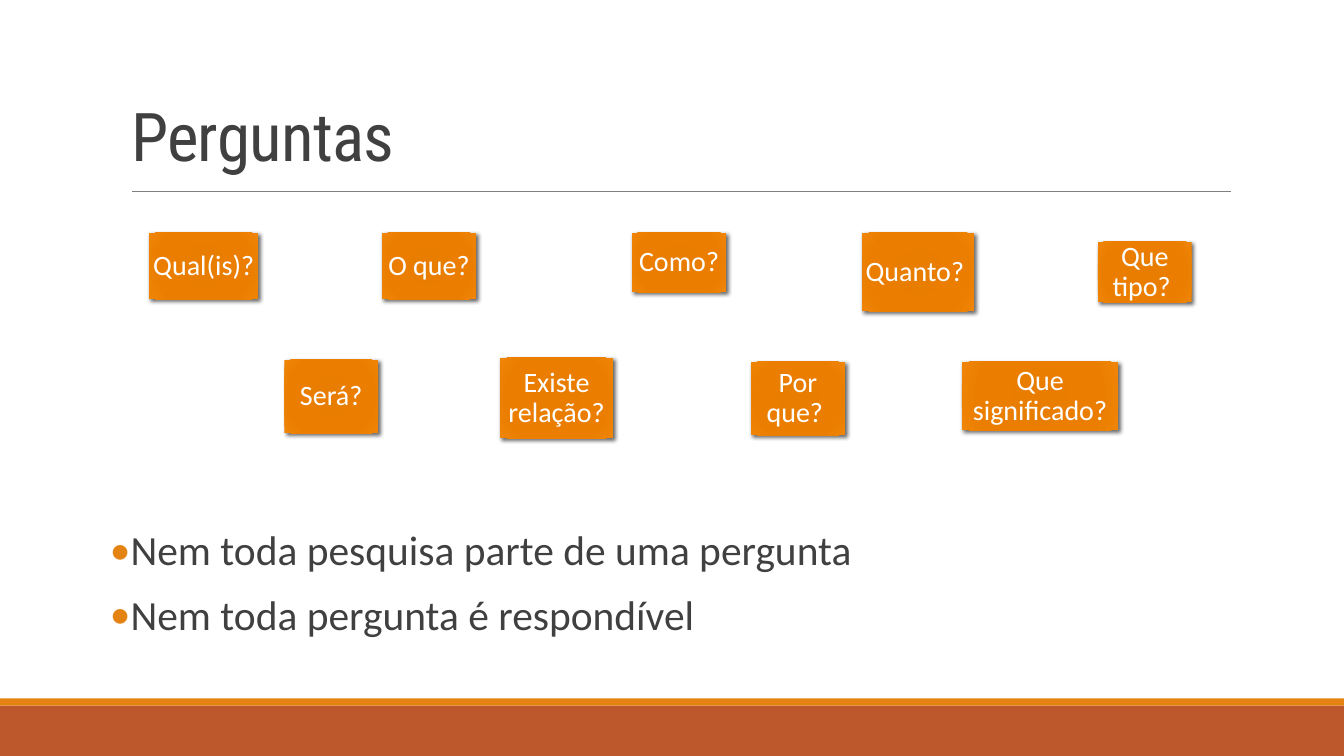
from lxml import etree
from pptx import Presentation
from pptx.dml.color import RGBColor
from pptx.enum.shapes import MSO_CONNECTOR as Link, MSO_SHAPE as Shape
from pptx.enum.text import MSO_ANCHOR as Anchor, MSO_AUTO_SIZE as Fit, PP_ALIGN as Align
from pptx.oxml import parse_xml
from pptx.oxml.ns import nsdecls, qn
from pptx.util import Inches, Pt

RUST = RGBColor(0xBD, 0x58, 0x2C)
ORANGE = RGBColor(0xE4, 0x83, 0x12)
GRAY = RGBColor(0x80, 0x80, 0x80)
DARK = RGBColor(0x40, 0x40, 0x40)
WHITE = RGBColor(0xFF, 0xFF, 0xFF)
GLOW = [(0, "E57B00"), (34, "E87D00"), (70, "EB7E00"), (100, "EF8407")]

# Cards: text, left, top, width, height
CARDS = [
    ("Qual(is)?", 1.48, 2.31, 1.08, 0.66),
    ("Será?", 2.82, 3.57, 0.93, 0.73),
    ("O que?", 3.79, 2.31, 0.93, 0.66),
    ("Existe relação?", 4.96, 3.55, 1.12, 0.8),
    ("Como?", 6.27, 2.31, 0.93, 0.59),
    ("Por que? ", 7.45, 3.59, 0.93, 0.73),
    ("Quanto? ", 8.55, 2.31, 1.11, 0.78),
    ("Que tipo? ", 10.89, 2.4, 0.93, 0.6),
    ("Que significado?", 9.54, 3.59, 1.55, 0.68),
]
POINTS = ["Nem toda pesquisa parte de uma pergunta",
          "Nem toda pergunta é respondível"]


def write(para, text, size=20, font="Calibri", color=DARK,
          align=Align.LEFT, lead=0.9, before=0, after=0):
    """Add a formatted run to a paragraph and return the run."""
    para.alignment, para.line_spacing = align, lead
    para.space_before, para.space_after = Pt(before), Pt(after)
    run = para.add_run()
    run.text = text
    run.font.size, run.font.name = Pt(size), font
    run.font.color.rgb = color
    return run


def frame(shape, anchor, side, edge):
    """Set up the text area of a shape and return it."""
    area = shape.text_frame
    area.word_wrap, area.auto_size = True, Fit.NONE
    area.vertical_anchor = anchor
    area.margin_left = area.margin_right = Inches(side)
    area.margin_top = area.margin_bottom = Inches(edge)
    return area


class Deck:
    def __init__(self):
        self.show = Presentation()
        self.show.slide_width = Inches(13.33)
        self.show.slide_height = Inches(7.5)
        self.slide = self.show.slides.add_slide(self.show.slide_layouts[1])

    def place(self, index, *box):
        holder = self.slide.placeholders[index]
        holder.left, holder.top, holder.width, holder.height = map(Inches, box)
        return holder

    def rect(self, *box):
        shape = self.slide.shapes.add_shape(Shape.RECTANGLE, *map(Inches, box))
        shape.shadow.inherit = False
        shape.line.fill.background()
        return shape

    def bar(self, color, *box):
        shape = self.rect(*box)
        shape.fill.solid()
        shape.fill.fore_color.rgb = color

    def rule(self, left, right, top):
        line = self.slide.shapes.add_connector(
            Link.STRAIGHT, Inches(left), Inches(top), Inches(right), Inches(top))
        line.line.color.rgb, line.line.width = GRAY, Pt(0.5)
        etree.SubElement(line.element.spPr, qn("a:effectLst"))

    def title(self, text, *box):
        area = frame(self.place(0, *box), Anchor.BOTTOM, 0.1, 0.05)
        run = write(area.paragraphs[0], text, size=48,
                    font="Roboto Condensed", lead=0.85)
        run.font._element.set("spc", "-50")

    def card(self, text, *box):
        shape = self.rect(*box)
        props = shape.element.spPr
        # Radial fill
        stops = "".join(f'<a:gs pos="{pos * 1000}"><a:srgbClr val="{tone}"/></a:gs>'
                        for pos, tone in GLOW)
        props.find(qn("a:ln")).addprevious(parse_xml(
            f'<a:gradFill {nsdecls("a")}><a:gsLst>{stops}</a:gsLst>'
            '<a:path path="circle"><a:fillToRect l="100000" t="100000" '
            'r="100000" b="100000"/></a:path></a:gradFill>'))
        # Soft shadow
        props.find(qn("a:effectLst")).append(parse_xml(
            f'<a:outerShdw {nsdecls("a")} blurRad="{Pt(3)}" dist="{Pt(2)}" '
            'dir="2700000" rotWithShape="0"><a:srgbClr val="000000">'
            '<a:alpha val="60000"/></a:srgbClr></a:outerShdw>'))
        area = frame(shape, Anchor.MIDDLE, 0.01, 0.01)
        write(area.paragraphs[0], text, color=WHITE, align=Align.CENTER)

    def bullets(self, items, *box):
        area = frame(self.place(1, *box), Anchor.TOP, 0, 0.05)
        for i, text in enumerate(items):
            para = area.add_paragraph() if i else area.paragraphs[0]
            write(para, text, size=29.6, before=12, after=2)
            props = para._p.get_or_add_pPr()
            props.set("marL", str(Inches(0.2)))
            props.set("indent", str(Inches(-0.2)))
            color = etree.SubElement(props, qn("a:buClr"))
            etree.SubElement(color, qn("a:srgbClr"), val=str(ORANGE))
            etree.SubElement(props, qn("a:buFont"), typeface="Calibri")
            etree.SubElement(props, qn("a:buChar"), char="•")


def main():
    deck = Deck()
    # Footer bands and title rule
    deck.bar(RUST, 0, 7, 13.33, 0.5)
    deck.bar(ORANGE, 0, 6.93, 13.33, 0.07)
    deck.rule(1.31, 12.21, 1.9)
    # Title, question cards and closing points
    deck.title("Perguntas", 1.2, 0.2, 11, 1.59)
    for card in CARDS:
        deck.card(*card)
    deck.bullets(POINTS, 1.09, 5.21, 11.22, 1.23)
    deck.show.save("out.pptx")


if __name__ == "__main__":
    main()
